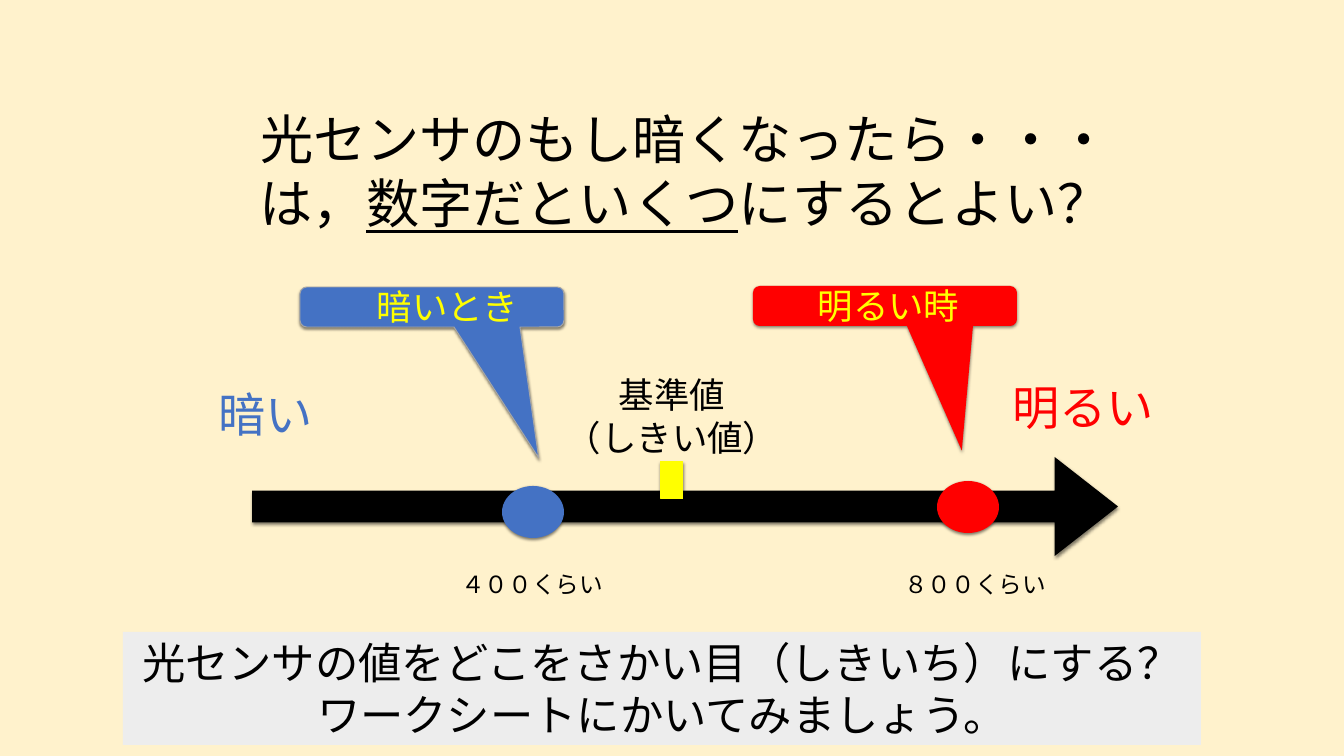
from lxml import etree
from pptx import Presentation
from pptx import util as u
from pptx.dml.color import RGBColor
from pptx.enum import shapes, text
from pptx.oxml.ns import qn

BLACK = RGBColor(0x00, 0x00, 0x00)
BLUE = RGBColor(0x44, 0x72, 0xC4)
RED = RGBColor(0xFF, 0x00, 0x00)
YELLOW = RGBColor(0xFF, 0xFF, 0x00)
CREAM = RGBColor(0xFF, 0xF2, 0xCC)
PALE_GREY = RGBColor(0xED, 0xED, 0xED)
GREY = RGBColor(0xA6, 0xA6, 0xA6)

FONT = "Noto Sans CJK JP"
PX = 914400 / 70.9
PAGE_SIZE = (1344, 756)
SHAPE = shapes.MSO_SHAPE

# Each line is a list of (words, underlined)
TITLE = [
    [("光センサのもし暗くなったら・・・", False)],
    [("は，", False), ("数字だといくつ", True), ("にするとよい？", False)],
]
TITLE_BOX = (232, 102, 907, 137)
ARROW_BOX = (252, 457, 866, 99)

# kind, box, fill, line, adjustments
MARKERS = [
    (SHAPE.RIGHT_ARROW, ARROW_BOX, BLACK, None, (0.32, 0.64)),
    (SHAPE.FLOWCHART_CONNECTOR, (937, 481, 62, 52), RED, None, ()),
    (SHAPE.FLOWCHART_CONNECTOR, (502, 486, 62, 52), BLUE, None, ()),
    (SHAPE.ROUNDED_RECTANGULAR_CALLOUT, (753, 286, 264, 40), RED, None,
     (0.291, 3.612, 0.167)),
    (SHAPE.ROUNDED_RECTANGULAR_CALLOUT, (300, 287, 264, 40), BLUE, GREY,
     (0.404, 3.768, 0.167)),
    (SHAPE.FLOWCHART_PROCESS, (661, 462, 22, 37), YELLOW, YELLOW, ()),
]

# lines, box, size, colour
LABELS = [
    (["暗い"], (194, 381, 143, 65), 48, BLUE),
    (["明るい"], (990, 374, 186, 65), 48, RED),
    (["明るい時"], (759, 280, 259, 51), 36, YELLOW),
    (["暗いとき"], (318, 281, 259, 51), 36, YELLOW),
    (["８００くらい"], (885, 566, 180, 37), 24, BLACK),
    (["４００くらい"], (442, 566, 180, 37), 24, BLACK),
    (["基準値", "（しきい値）"], (555, 369, 234, 94), 36, BLACK),
]
QUESTION = ["光センサの値をどこをさかい目（しきいち）にする？",
            "ワークシートにかいてみましょう。"]
QUESTION_BOX = (123, 632, 1078, 113)


def px(*lengths):
    return [u.Emu(round(length * PX)) for length in lengths]


def plain(lines):
    return [[(line, False)] for line in lines]


def write(shape, lines, size, colour):
    """Fill a shape with centred lines of (words, underlined) spans."""
    frame = shape.text_frame
    frame.word_wrap = True
    frame.auto_size = text.MSO_AUTO_SIZE.NONE
    frame.vertical_anchor = text.MSO_ANCHOR.MIDDLE
    frame.margin_left, frame.margin_top, frame.margin_right, frame.margin_bottom = px(4, 4, 4, 4)
    for index, line in enumerate(lines):
        para = frame.add_paragraph() if index else frame.paragraphs[0]
        para.alignment = text.PP_ALIGN.CENTER
        para.font.size = u.Pt(size)
        para.font.color.rgb = colour
        para.font.name = FONT
        # Japanese letters take the East Asian typeface
        defaults = para._p.pPr.find(qn("a:defRPr"))
        etree.SubElement(defaults, qn("a:ea"), typeface=FONT)
        for words, underlined in line:
            span = para.add_run()
            span.text = words
            if underlined:
                span.font.underline = True


def add_solid(page, kind, box, fill, line=None):
    shape = page.shapes.add_shape(kind, *px(*box))
    shape.shadow.inherit = False
    shape.fill.solid()
    shape.fill.fore_color.rgb = fill
    if line is None:
        shape.line.fill.background()
    else:
        shape.line.color.rgb = line
        shape.line.width = u.Pt(1)
    return shape


def drop_shadow(shape):
    effects = shape._element.spPr.find(qn("a:effectLst"))
    shadow = etree.SubElement(
        effects, qn("a:outerShdw"), blurRad=str(u.Pt(3)), dist=str(u.Pt(2)),
        dir=str(90 * 60000), rotWithShape="0")
    colour = etree.SubElement(shadow, qn("a:srgbClr"), val=str(BLACK))
    etree.SubElement(colour, qn("a:alpha"), val="50000")


def main():
    deck = Presentation()
    deck.slide_width, deck.slide_height = px(*PAGE_SIZE)
    page = deck.slides.add_slide(deck.slide_layouts[5])
    page.background.fill.solid()
    page.background.fill.fore_color.rgb = CREAM

    title = page.shapes.title
    title.left, title.top, title.width, title.height = px(*TITLE_BOX)
    write(title, TITLE, 54, BLACK)

    for kind, box, fill, line, adjustments in MARKERS:
        marker = add_solid(page, kind, box, fill, line)
        for index, value in enumerate(adjustments):
            marker.adjustments[index] = value
        drop_shadow(marker)

    for lines, box, size, colour in LABELS:
        write(page.shapes.add_textbox(*px(*box)), plain(lines), size, colour)

    question = add_solid(page, SHAPE.RECTANGLE, QUESTION_BOX, PALE_GREY)
    write(question, plain(QUESTION), 44, BLACK)

    deck.save("out.pptx")


if __name__ == "__main__":
    main()
